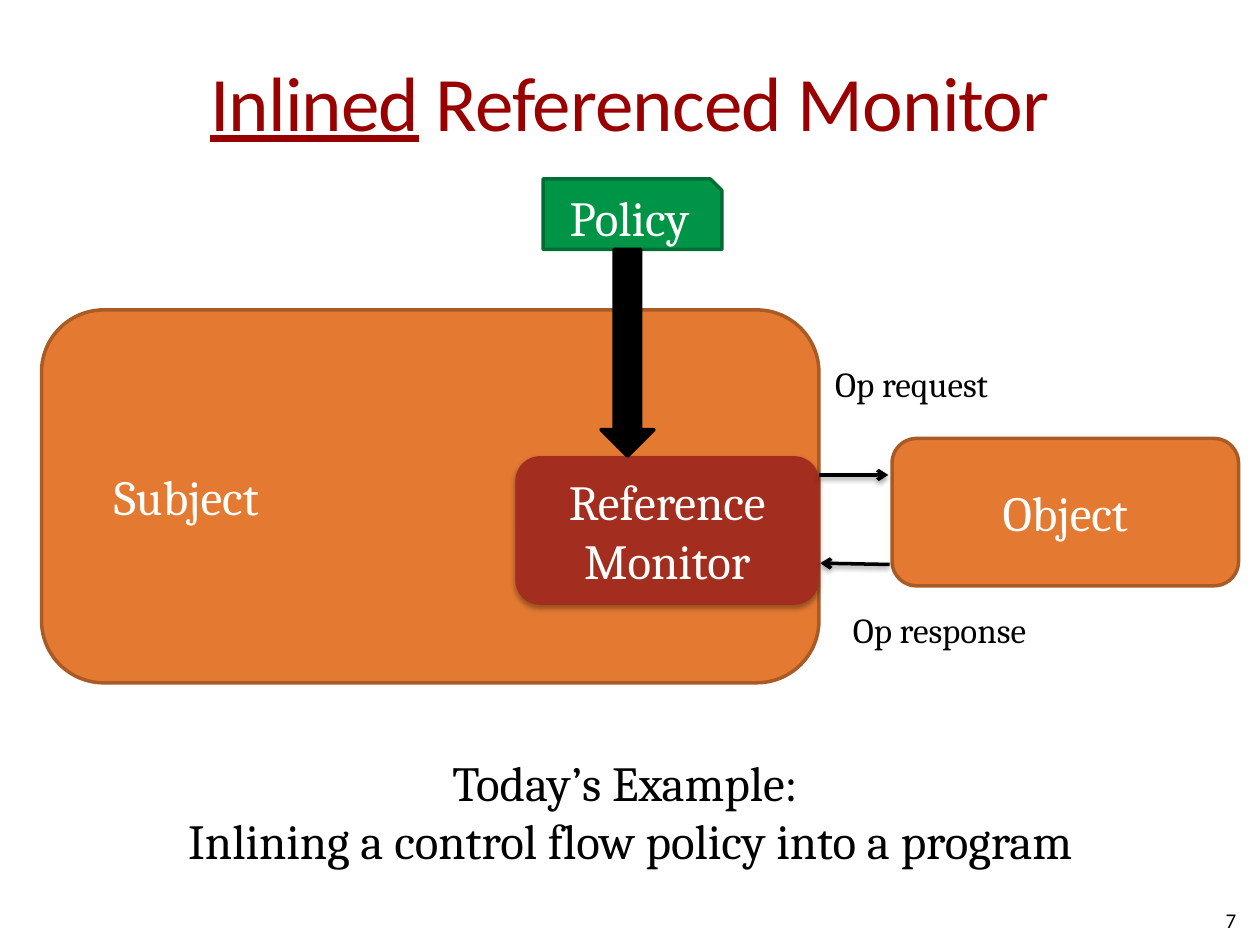
from pptx import Presentation
from pptx.dml.color import RGBColor
from pptx.enum.shapes import MSO_CONNECTOR, MSO_SHAPE
from pptx.enum.text import MSO_ANCHOR, PP_ALIGN
from pptx.oxml import parse_xml
from pptx.oxml.ns import nsdecls
from pptx.util import Inches, Pt

BLACK = RGBColor(0x00, 0x00, 0x00)
WHITE = RGBColor(0xFF, 0xFF, 0xFE)
TITLE_RED = RGBColor(0x99, 0x00, 0x00)
MONITOR_RED = RGBColor(0xA3, 0x2D, 0x1F)
ORANGE = RGBColor(0xE4, 0x79, 0x32)
DARK_ORANGE = RGBColor(0xA9, 0x5A, 0x25)
GREEN = RGBColor(0x00, 0x94, 0x46)
DARK_GREEN = RGBColor(0x00, 0x6D, 0x34)


def write_text(holder, text, size=28, font="Cambria", color=BLACK,
               align=PP_ALIGN.CENTER, anchor=MSO_ANCHOR.MIDDLE, wrap=True):
    """Write one paragraph into a shape or text box and return its runs."""
    frame = holder.text_frame
    frame.word_wrap = wrap
    frame.vertical_anchor = anchor
    paragraph = frame.paragraphs[0]
    paragraph.text = text
    paragraph.alignment = align
    for run in paragraph.runs:
        run.font.size = Pt(size)
        run.font.name = font
        run.font.color.rgb = color
    return paragraph.runs


def cast_shadow(item, opacity, distance):
    """Give a shape or connector a soft shadow straight below it."""
    item._element.spPr.append(parse_xml(
        f'<a:effectLst {nsdecls("a")}>'
        f'<a:outerShdw blurRad="{Pt(3.1)}" dist="{Pt(distance)}" dir="5400000" rotWithShape="0">'
        f'<a:srgbClr val="000000"><a:alpha val="{opacity * 1000}"/></a:srgbClr>'
        '</a:outerShdw></a:effectLst>'))


prs = Presentation()
prs.slide_width, prs.slide_height = Inches(10), Inches(7.5)
slide = prs.slides.add_slide(prs.slide_layouts[6])
shapes = slide.shapes

# Title with its first word underlined
title = shapes.add_textbox(Inches(0.5), Inches(0.17), Inches(9), Inches(1.25))
title.text_frame.margin_left = title.text_frame.margin_right = 0
inlined = write_text(title, "Inlined", size=44, font="Calibri", color=TITLE_RED)[0]
inlined.font.underline = True
rest = title.text_frame.paragraphs[0].add_run()
rest.text = " Referenced Monitor"
rest.font.size, rest.font.name = Pt(44), "Calibri"
rest.font.color.rgb = TITLE_RED
for run in (inlined, rest):
    run.font._element.set("spc", "-50")

# Slide number
number = shapes.add_textbox(Inches(7.58), Inches(7.1), Inches(2.33), Inches(0.4))
write_text(number, "7", size=12, font="Calibri", align=PP_ALIGN.RIGHT)

# Boxes, from back to front, and the arrow from the policy to the monitor
ROUND, SNIP, DOWN = MSO_SHAPE.ROUNDED_RECTANGLE, MSO_SHAPE.SNIP_1_RECTANGLE, MSO_SHAPE.DOWN_ARROW
for kind, label, left, top, width, height, fill, outline in [
    (ROUND, "Subject", 0.33, 2.46, 6.17, 2.96, ORANGE, DARK_ORANGE),
    (ROUND, "Object", 7.08, 3.48, 2.75, 1.17, ORANGE, DARK_ORANGE),
    (ROUND, "Reference Monitor", 4.09, 3.62, 2.41, 1.18, MONITOR_RED, None),
    (SNIP, "Policy", 4.31, 1.42, 1.42, 0.56, GREEN, DARK_GREEN),
    (DOWN, "", 4.77, 1.98, 0.42, 1.64, BLACK, BLACK),
]:
    box = shapes.add_shape(kind, Inches(left), Inches(top), Inches(width), Inches(height))
    box.fill.solid()
    box.fill.fore_color.rgb = fill
    if outline is None:
        box.line.fill.background()
        cast_shadow(box, opacity=35, distance=1.8)
    else:
        box.line.color.rgb = outline
        box.line.width = Pt(2)
        box.shadow.inherit = False
    if label == "Subject":
        box.text_frame.margin_left = Inches(0.43)
        write_text(box, label, color=WHITE, align=PP_ALIGN.LEFT)
    elif label:
        write_text(box, label, color=WHITE)

# Request and response between monitor and object
for label, left, top, width, start_x, start_y, end_x, end_y in [
    ("Op request", 6.53, 2.83, 1.52, 6.5, 3.77, 7.05, 3.77),
    ("Op response", 6.67, 4.78, 1.7, 7.06, 4.48, 6.51, 4.47),
]:
    caption = shapes.add_textbox(Inches(left), Inches(top), Inches(width), Inches(0.44))
    write_text(caption, label, size=20, align=PP_ALIGN.LEFT, anchor=MSO_ANCHOR.TOP, wrap=False)
    arrow = shapes.add_connector(MSO_CONNECTOR.STRAIGHT, Inches(start_x), Inches(start_y),
                                 Inches(end_x), Inches(end_y))
    arrow.line.color.rgb = BLACK
    arrow.line.width = Pt(2)
    arrow.line._get_or_add_ln().append(parse_xml(f'<a:tailEnd {nsdecls("a")} type="arrow"/>'))
    cast_shadow(arrow, opacity=38, distance=1.6)

# Example at the bottom
example = shapes.add_textbox(Inches(1.04), Inches(5.92), Inches(7.92), Inches(1.04))
write_text(example, "Today’s Example: \nInlining a control flow policy into a program",
           anchor=MSO_ANCHOR.TOP)

prs.save("out.pptx")
